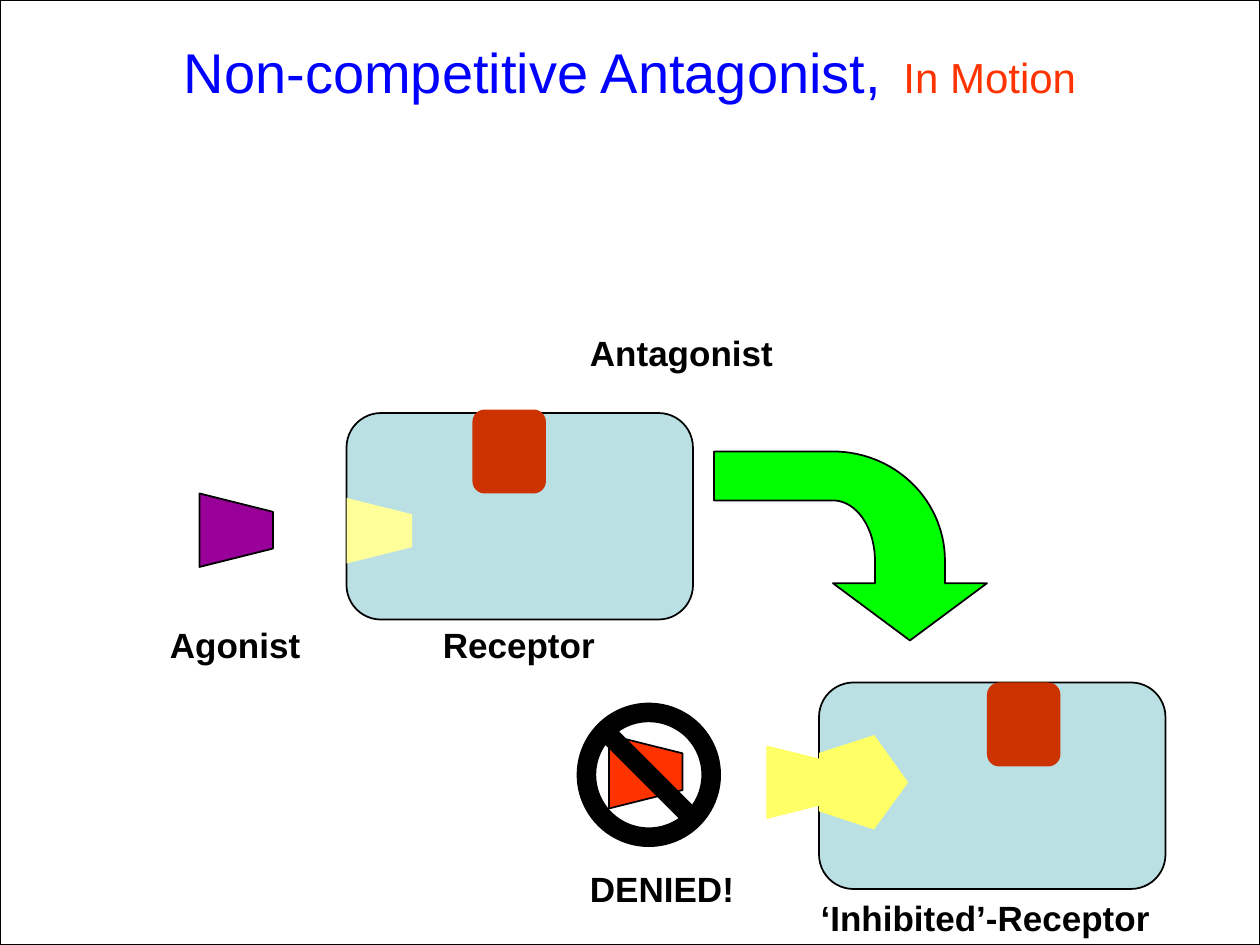
from math import cos, radians, sin

from pptx import Presentation
from pptx.dml.color import RGBColor
from pptx.enum.shapes import MSO_SHAPE as SHAPE
from pptx.enum.text import MSO_ANCHOR as ANCHOR, PP_ALIGN as ALIGN
from pptx.util import Pt

BLACK = RGBColor(0x00, 0x00, 0x00)
WHITE = RGBColor(0xFF, 0xFF, 0xFF)
BLUE = RGBColor(0x00, 0x00, 0xFF)
ORANGE = RGBColor(0xFF, 0x33, 0x00)
RUST = RGBColor(0xCC, 0x33, 0x00)
PURPLE = RGBColor(0x99, 0x00, 0x99)
GREEN = RGBColor(0x00, 0xFF, 0x00)
PALE_BLUE = RGBColor(0xBB, 0xE0, 0xE3)
PALE_YELLOW = RGBColor(0xFF, 0xFF, 0x99)
YELLOW = RGBColor(0xFF, 0xFF, 0x66)

deck = Presentation()
deck.slide_width, deck.slide_height = Pt(720), Pt(540)
page = deck.slides.add_slide(deck.slide_layouts[6])
shapes = page.shapes


def paint(shape, fill, outlined=False):
    shape.shadow.inherit = False
    shape.fill.solid()
    shape.fill.fore_color.rgb = fill
    if outlined:
        shape.line.color.rgb = BLACK
        shape.line.width = Pt(1)
    else:
        shape.line.fill.background()
    return shape


def draw_outline(points, fill, outlined=False):
    corners = [(Pt(x), Pt(y)) for x, y in points]
    builder = shapes.build_freeform(*corners[0])
    builder.add_line_segments(corners[1:], close=True)
    return paint(builder.convert_to_shape(), fill, outlined)


# White page with a thin black frame
paint(shapes.add_shape(SHAPE.RECTANGLE, 0, 0, Pt(720), Pt(540)), WHITE, True)

# Bent arrow: two quarter arcs around one centre, head pointing down
center_x, center_y = 476, 320.4
turn = [radians(angle) for angle in range(0, 91, 3)]
outer = [(center_x + 64 * cos(a), center_y - 62.4 * sin(a)) for a in turn]
inner = [(center_x + 24 * cos(a), center_y - 34.4 * sin(a)) for a in reversed(turn)]
head = [(500, 333.3), (476, 333.3), (520, 366), (564, 333.3), (540, 333.3)]
draw_outline(outer + [(408, 258), (408, 286)] + inner + head, GREEN, True)

# Receptors
for left, top in [(468, 390), (198, 236)]:
    receptor = shapes.add_shape(SHAPE.ROUNDED_RECTANGLE, Pt(left), Pt(top), Pt(198), Pt(118))
    receptor.adjustments[0] = 0.167
    paint(receptor, PALE_BLUE, True)

# Distorted binding site of the inhibited receptor
site = shapes.add_shape(SHAPE.REGULAR_PENTAGON, Pt(466.5), Pt(421.5), Pt(54), Pt(51))
site.rotation = 90.2
paint(site, YELLOW)

# Antagonists docked on top of the receptors
for left, top in [(564, 390), (270, 234)]:
    antagonist = shapes.add_shape(SHAPE.ROUNDED_RECTANGLE, Pt(left), Pt(top), Pt(42), Pt(48))
    antagonist.adjustments[0] = 0.167
    paint(antagonist, RUST)

# Trapezoids: open site, agonist, denied agonist, agonist at the blocked site
for left, top, size, fill, outlined in [
    (198, 284.5, 37.5, PALE_YELLOW, False),
    (114, 282, 42, PURPLE, True),
    (348, 420, 42, ORANGE, True),
    (438, 426, 42, YELLOW, False),
]:
    right, bottom, slope = left + size, top + size, size / 4
    draw_outline(
        [(left, bottom), (right, bottom - slope), (right, top + slope), (left, top)],
        fill, outlined,
    )

# Prohibition sign over the denied agonist
sign = shapes.add_shape(SHAPE.NO_SYMBOL, Pt(330), Pt(402), Pt(81.5), Pt(81.5))
sign.adjustments[0] = 0.125
paint(sign, BLACK, True)

# Labels
for text, left, top, width, align, wrap in [
    ("Agonist", 90, 353, 90, ALIGN.LEFT, True),
    ("Receptor", 246, 353, 120, ALIGN.LEFT, True),
    ("Antagonist", 330, 186, 120, ALIGN.LEFT, True),
    ("‘Inhibited’-Receptor", 461, 509, 204, ALIGN.CENTER, False),
    ("DENIED!", 330, 492, 98, ALIGN.LEFT, False),
]:
    box = shapes.add_textbox(Pt(left), Pt(top), Pt(width), Pt(31.5))
    box.text_frame.word_wrap = wrap
    box.text_frame.text = text
    para = box.text_frame.paragraphs[0]
    para.alignment = align
    font = para.runs[0].font
    font.name, font.size, font.bold = "Arial", Pt(20), True
    font.color.rgb = BLACK

# Title
title = shapes.add_textbox(Pt(36), Pt(6), Pt(648), Pt(60))
title.text_frame.word_wrap = True
title.text_frame.vertical_anchor = ANCHOR.MIDDLE
para = title.text_frame.paragraphs[0]
para.alignment = ALIGN.CENTER
for text, size, color in [
    ("Non-competitive Antagonist,", 32, BLUE),
    (" ", 44, BLACK),
    ("In Motion", 24, ORANGE),
]:
    span = para.add_run()
    span.text = text
    span.font.name, span.font.size = "Arial", Pt(size)
    span.font.color.rgb = color

deck.save("out.pptx")
